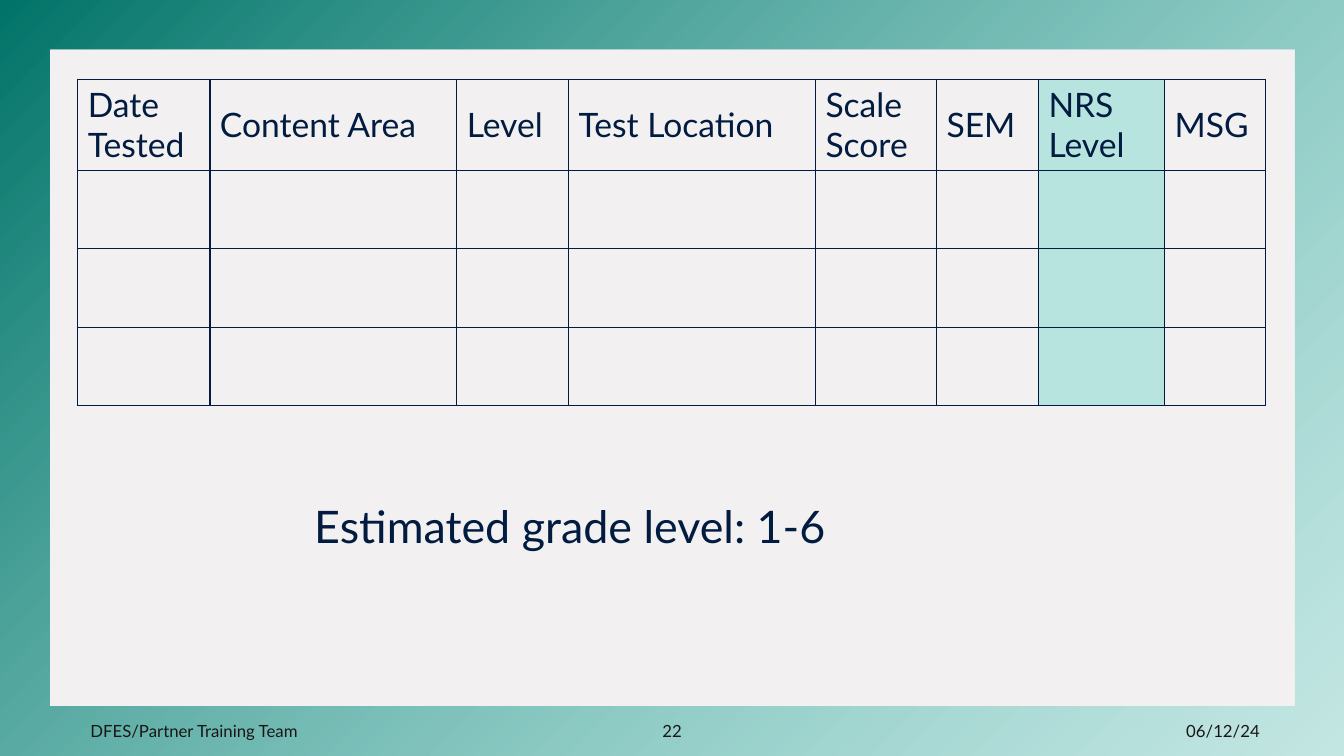
from lxml.etree import SubElement as Sub, fromstring
from pptx import Presentation
from pptx.dml.color import RGBColor as Rgb
from pptx.enum.shapes import MSO_SHAPE as Kind
from pptx.enum.text import MSO_ANCHOR as Anchor, MSO_AUTO_SIZE as Auto, PP_ALIGN as Align
from pptx.oxml.ns import qn
from pptx.util import Cm, Pt

HEX = {"back": "F2F0F0", "teal": "027469", "mint": "7ED9D0", "navy": "011C40", "ink": "1A1616"}
HEADS = [
    ("Date Tested", 3.33),
    ("Content Area", 6.22),
    ("Level", 2.82),
    ("Test Location", 6.22),
    ("Scale Score", 3.05),
    ("SEM", 2.57),
    ("NRS Level", 3.18),
    ("MSG", 2.54),
]
MARKED = "NRS Level"
ROWS = [2.28, 1.98, 1.98, 1.98]
LEFT, TOP = 1.96, 2.0
WIDE, HIGH, EDGE = 33.87, 19.05, 1.27
FOOT = [
    ("06/12/24", 25.65, 6.35, Align.RIGHT),
    ("DFES/Partner Training Team", 2.03, 10.08, Align.LEFT),
    ("22", 13.13, 7.62, Align.CENTER),
]
GRADE = "Estimated grade level: 1-6"


def tint(name):
    return Rgb.from_string(HEX[name])


def style(text, size, hue, **para):
    line = text.paragraphs[0]
    for key, val in para.items():
        setattr(line, key, val)
    for key, val in {"name": "Lato", "size": Pt(size)}.items():
        setattr(line.font, key, val)
    line.font.color.rgb = tint(hue)


def fade(node, part):
    for hue in node.iter(qn("a:srgbClr")):
        if hue.get("val") == HEX["mint"]:
            Sub(hue, qn("a:alpha"), val=str(part * 1000))


def plain(shape):
    shape.shadow.inherit = False
    shape.line.fill.background()


def label(slide, words, box, size, hue, align, **form):
    text = slide.shapes.add_textbox(*map(Cm, box)).text_frame
    text.text = words
    for key, val in {"word_wrap": True, **form}.items():
        setattr(text, key, val)
    style(text, size, hue, alignment=align)


def frame(slide):
    far, low = WIDE - EDGE, HIGH - EDGE
    hole = [(EDGE, EDGE), (EDGE, low), (far, low), (far, EDGE)]
    rim = [(0, 0), (WIDE, 0), (WIDE, HIGH), (0, HIGH)]
    hole, rim = [[(Cm(x), Cm(y)) for x, y in ring] for ring in (hole, rim)]
    pen = slide.shapes.build_freeform(*hole[0])
    pen.add_line_segments(hole[1:], close=True)
    pen.move_to(*rim[0])
    pen.add_line_segments(rim[1:], close=True)
    shape = pen.convert_to_shape()
    plain(shape)
    shape.fill.gradient()
    shape.fill.gradient_angle = 315
    for stop, name, spot in zip(shape.fill.gradient_stops, ("teal", "mint"), (0, 1)):
        stop.color.rgb = tint(name)
        stop.position = spot
    fade(shape.element, 40)


def border(cell):
    props = cell._tc.get_or_add_tcPr()
    space = "http://schemas.openxmlformats.org/drawingml/2006/main"
    for spot, side in enumerate("LRTB"):
        props.insert(spot, fromstring(
            f'<a:ln{side} xmlns:a="{space}" w="{Pt(1)}"><a:solidFill>'
            f'<a:srgbClr val="{HEX["navy"]}"/></a:solidFill></a:ln{side}>'))


def scores(slide):
    names, widths = zip(*HEADS)
    col = names.index(MARKED)
    box = (LEFT + sum(widths[:col]), TOP, widths[col], sum(ROWS))
    mark = slide.shapes.add_shape(Kind.RECTANGLE, *map(Cm, box))
    plain(mark)
    mark.fill.solid()
    mark.fill.fore_color.rgb = tint("mint")
    fade(mark.element, 50)

    box = (LEFT, TOP, sum(widths), sum(ROWS))
    grid = slide.shapes.add_table(len(ROWS), len(names), *map(Cm, box)).table
    for key in ("first_row", "horz_banding"):
        setattr(grid, key, False)
    for part, width in zip(grid.columns, widths):
        part.width = Cm(width)
    for part, height in zip(grid.rows, ROWS):
        part.height = Cm(height)
    for cell in grid.iter_cells():
        cell.fill.background()
        cell.vertical_anchor = Anchor.MIDDLE
        border(cell)
    for cell, name in zip(grid.rows[0].cells, names):
        cell.text = name
        style(cell.text_frame, 24, "navy")


def main():
    deck = Presentation()
    deck.slide_width, deck.slide_height = Cm(WIDE), Cm(HIGH)
    slide = deck.slides.add_slide(deck.slide_layouts[6])
    back = slide.background.fill
    back.solid()
    back.fore_color.rgb = tint("back")
    frame(slide)
    for words, left, width, align in FOOT:
        label(slide, words, (left, 17.91, width, 1.02), 12, "ink", align,
              vertical_anchor=Anchor.MIDDLE)
    scores(slide)
    label(slide, GRADE, (7.67, 12.45, 18.52, 1.63), 32, "navy", Align.LEFT,
          auto_size=Auto.SHAPE_TO_FIT_TEXT)
    deck.save("out.pptx")


if __name__ == "__main__":
    main()
